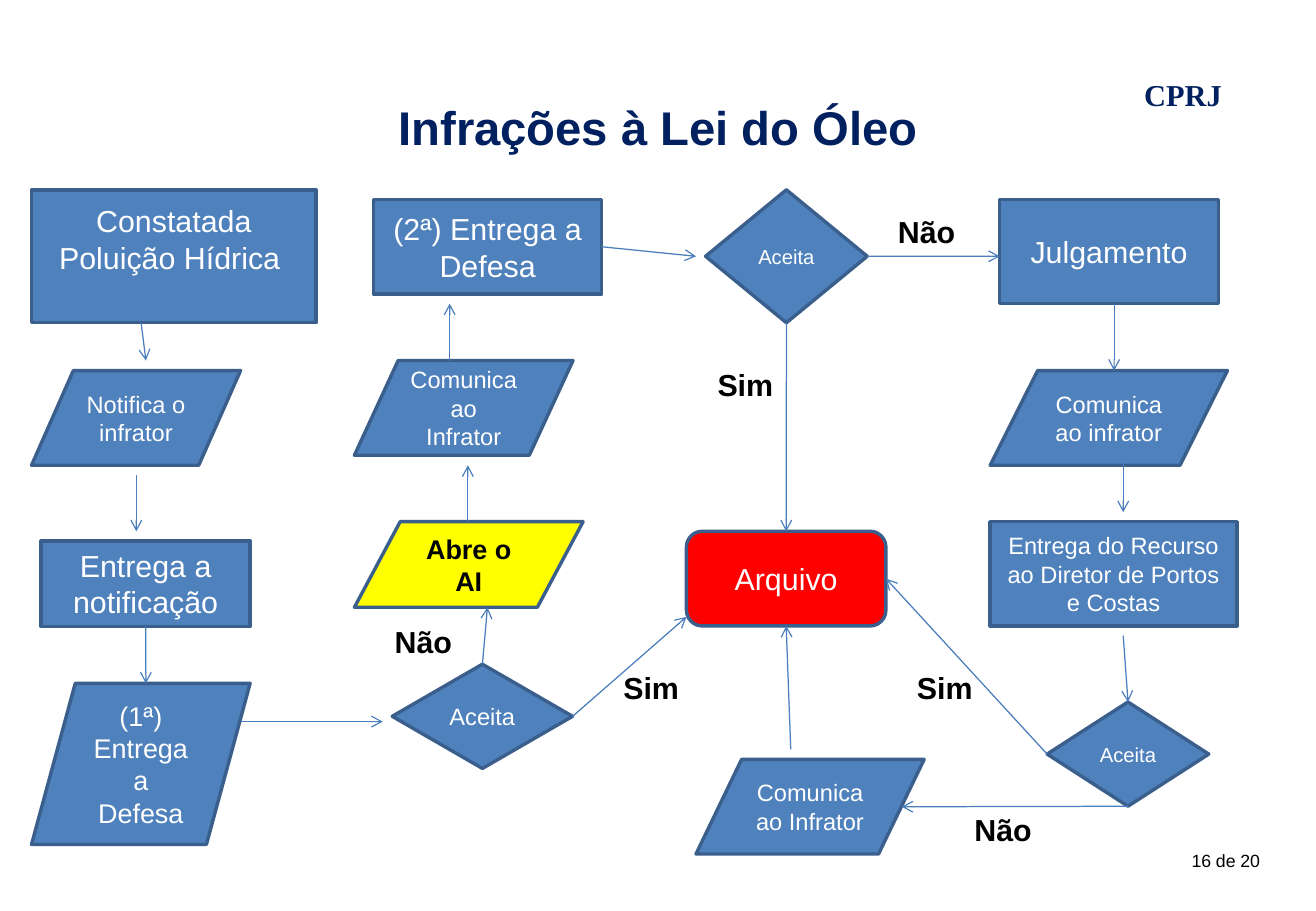
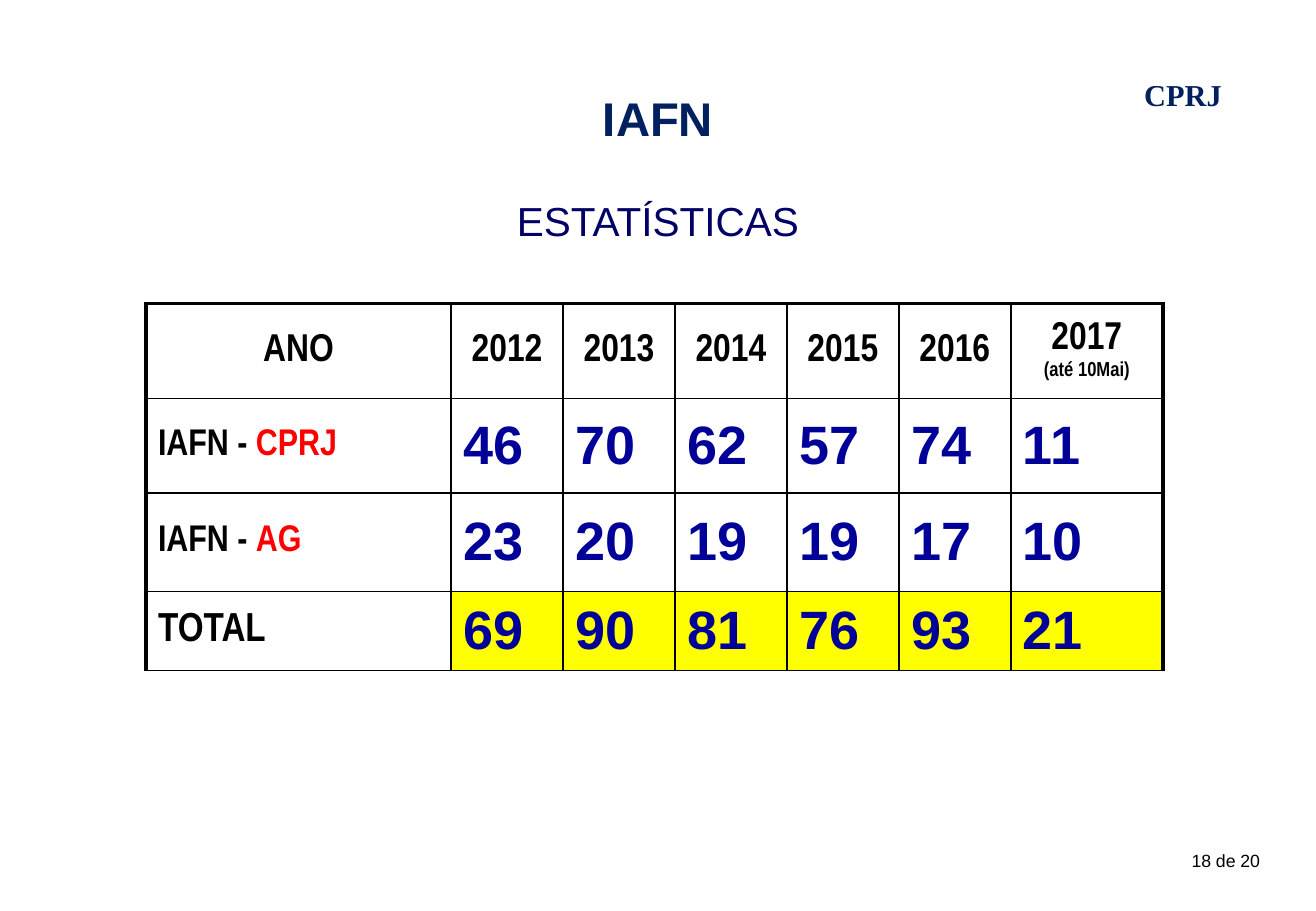
from lxml.etree import SubElement
from pptx import Presentation
from pptx.dml.color import RGBColor
from pptx.enum.shapes import MSO_CONNECTOR, MSO_SHAPE
from pptx.enum.text import MSO_ANCHOR, PP_ALIGN
from pptx.oxml.ns import qn
from pptx.util import Cm, Pt


class Theme:
    navy = "002060"
    subtitle = "000066"
    figure = "000099"
    blue = "4F81BD"
    outline = "3A5F8C"
    arrow = "4B7EBC"
    red = "FF0000"
    yellow = "FFFF00"
    black = "000000"
    white = "FFFFFF"
    sans = "Arial"
    narrow = "Arial Narrow"
    serif = "Times New Roman"
    title_size = 28
    subtitle_size = 24
    label_size = 18
    footer_size = 10.5
    header_size = 23
    figure_size = 32
    note_size = 12
    thick = 2.25
    thin = 1


PROCESS = MSO_SHAPE.FLOWCHART_PROCESS
DATA = MSO_SHAPE.FLOWCHART_DATA
DECISION = MSO_SHAPE.FLOWCHART_DECISION
ARCHIVE = MSO_SHAPE.FLOWCHART_ALTERNATE_PROCESS
TOP, LEFT, BOTTOM, RIGHT = range(4)

SLIDE_SIZE = (27.51, 19.05)
HEADER_MARK = "CPRJ"

FLOW_TITLE = "Infrações à Lei do Óleo"
FLOW_NODES = {
    "poluição": (PROCESS, "Constatada Poluição Hídrica ", 18, (0.66, 3.97, 5.95, 2.78)),
    "notifica": (DATA, "Notifica o infrator", 14, (0.66, 7.75, 4.37, 1.98)),
    "notificação": (PROCESS, "Entrega a notificação", 18, (0.86, 11.31, 4.37, 1.79)),
    "defesa 1": (DATA, "(1ª) Entrega a Defesa", 16, (0.66, 14.29, 4.57, 3.37)),
    "aceita 1": (DECISION, "Aceita", 14, (8.2, 13.89, 3.77, 2.18)),
    "abre": (DATA, "Abre o AI", 16, (7.41, 10.91, 4.78, 1.79)),
    "comunica 1": (DATA, "Comunica ao Infrator", 14, (7.41, 7.54, 4.57, 1.98)),
    "defesa 2": (PROCESS, "(2ª) Entrega a Defesa", 18, (7.81, 4.17, 4.77, 1.98)),
    "aceita 2": (DECISION, "Aceita", 12, (14.75, 3.97, 3.38, 2.78)),
    "arquivo": (ARCHIVE, "Arquivo", 18, (14.35, 11.11, 4.17, 1.98)),
    "julgamento": (PROCESS, "Julgamento", 18, (20.9, 4.17, 4.57, 2.18)),
    "comunica 2": (DATA, "Comunica ao infrator", 14, (20.7, 7.75, 4.96, 1.98)),
    "recurso": (PROCESS, "Entrega do Recurso ao Diretor de Portos e Costas", 14,
                (20.7, 10.91, 5.16, 2.18)),
    "aceita 3": (DECISION, "Aceita", 12, (21.89, 14.68, 3.38, 2.18)),
    "comunica 3": (DATA, "Comunica ao Infrator", 14, (14.55, 15.88, 4.77, 1.98)),
}
NODE_LOOKS = {
    "abre": {"fill": Theme.yellow, "color": Theme.black, "bold": True},
    "arquivo": {"fill": Theme.red},
}
NODE_BOTTOM_INSETS = {"poluição": 0.86}

FLOW_ARROWS = [
    ((2.95, 6.75), (3.05, 7.54)),
    ((2.85, 9.93), (2.85, 11.11)),
    (("notificação", BOTTOM), (3.05, 14.29)),
    ((5.03, 15.09), (8.0, 15.09)),
    (("aceita 1", TOP), (10.19, 12.7)),
    (("aceita 1", RIGHT), (14.35, 12.9)),
    ((9.78, 10.91), (9.78, 9.73)),
    ((9.4, 7.54), (9.4, 6.35)),
    (("defesa 2", RIGHT), (14.55, 5.36)),
    (("aceita 2", RIGHT), (20.9, 5.36)),
    (("aceita 2", BOTTOM), ("arquivo", TOP)),
    ((23.29, 6.35), (23.29, 7.75)),
    ((23.48, 9.53), (23.48, 10.71)),
    ((23.48, 13.29), ("aceita 3", TOP)),
    (("aceita 3", LEFT), ("arquivo", RIGHT)),
    (("aceita 3", BOTTOM), (18.85, 16.87)),
    ((16.53, 15.67), ("arquivo", BOTTOM)),
]

FLOW_LABELS = [
    ("Não", 8.0, 12.9),
    ("Sim", 12.78, 13.87),
    ("Sim", 14.75, 7.54),
    ("Não", 18.52, 4.34),
    ("Sim", 18.92, 13.87),
    ("Não", 20.12, 16.84),
]

STATS_TITLE = "IAFN"
STATS_SUBTITLE = "ESTATÍSTICAS"
YEARS = ["2012", "2013", "2014", "2015", "2016", "2017"]
LAST_YEAR_NOTE = "(até 10Mai)"
STATS_ROWS = [
    ("IAFN - ", "CPRJ", 22, [46, 70, 62, 57, 74, 11]),
    ("IAFN - ", "AG", 22, [23, 20, 19, 19, 17, 10]),
    ("TOTAL", "", 24, [69, 90, 81, 76, 93, 21]),
]
COLUMN_WIDTHS = [6.38] + [2.34] * 5 + [3.18]
ROW_HEIGHTS = [1.98, 1.98, 2.06, 1.65]


def rgb(value):
    return RGBColor.from_string(value)


def write(frame, *lines, size, color=Theme.black, font=Theme.sans, bold=False,
          align=PP_ALIGN.LEFT, spacing=None):
    for index, line in enumerate(lines):
        para = frame.paragraphs[0] if index == 0 else frame.add_paragraph()
        para.alignment = align
        if spacing:
            para.line_spacing = spacing
        for text, changes in [(line, {})] if isinstance(line, str) else line:
            span = para.add_run()
            span.text = text
            span.font.name = font
            span.font.bold = bold
            span.font.size = Pt(changes.get("size", size))
            span.font.color.rgb = rgb(changes.get("color", color))


def add_text(page, text, place, anchor=MSO_ANCHOR.TOP, inset=True, **look):
    box = page.shapes.add_textbox(*map(Cm, place))
    frame = box.text_frame
    frame.word_wrap = True
    frame.vertical_anchor = anchor
    if not inset:
        frame.margin_left = frame.margin_right = 0
        frame.margin_top = frame.margin_bottom = 0
    write(frame, text, **look)


def add_page(deck, title, title_height, number):
    page = deck.slides.add_slide(deck.slide_layouts[6])
    add_text(page, HEADER_MARK, (23.67, 1.47, 2.39, 1.02), size=Theme.label_size,
             font=Theme.serif, color=Theme.navy, bold=True)
    add_text(page, title, (1.37, 0.76, 24.77, title_height), anchor=MSO_ANCHOR.MIDDLE,
             inset=False, size=Theme.title_size, color=Theme.navy, bold=True,
             align=PP_ALIGN.CENTER, spacing=1.5)
    add_text(page, f"{number} de 20", (24.66, 17.65, 2.18, 0.71), size=Theme.footer_size)
    return page


def add_node(page, kind, text, size, place, fill=Theme.blue, color=Theme.white, bold=False):
    node = page.shapes.add_shape(kind, *map(Cm, place))
    node.shadow.inherit = False
    node.fill.solid()
    node.fill.fore_color.rgb = rgb(fill)
    node.line.color.rgb = rgb(Theme.outline)
    node.line.width = Pt(2)
    node.text_frame.vertical_anchor = MSO_ANCHOR.MIDDLE
    write(node.text_frame, text, size=size, color=color, bold=bold, align=PP_ALIGN.CENTER)
    return node


def add_arrow(page, nodes, start, end):
    points = [(0, 0) if point[0] in nodes else point for point in (start, end)]
    arrow = page.shapes.add_connector(
        MSO_CONNECTOR.STRAIGHT, *(Cm(value) for point in points for value in point))
    if start[0] in nodes:
        arrow.begin_connect(nodes[start[0]], start[1])
    if end[0] in nodes:
        arrow.end_connect(nodes[end[0]], end[1])
    arrow.line.color.rgb = rgb(Theme.arrow)
    arrow.line.width = Pt(0.75)
    SubElement(arrow.line._get_or_add_ln(), qn("a:tailEnd"), type="arrow")
    SubElement(arrow._element.spPr, qn("a:effectLst"))


def set_borders(cell, widths):
    properties = cell._tc.get_or_add_tcPr()
    for side, width in widths.items():
        line = SubElement(properties, qn(f"a:ln{side}"), w=str(Pt(width)))
        SubElement(SubElement(line, qn("a:solidFill")), qn("a:srgbClr"), val=Theme.black)


def build_flow(deck):
    page = add_page(deck, FLOW_TITLE, 3.18, 16)
    nodes = {name: add_node(page, *node, **NODE_LOOKS.get(name, {}))
             for name, node in FLOW_NODES.items()}
    for name, inset in NODE_BOTTOM_INSETS.items():
        nodes[name].text_frame.margin_bottom = Cm(inset)
    for start, end in FLOW_ARROWS:
        add_arrow(page, nodes, start, end)
    for text, left, top in FLOW_LABELS:
        add_text(page, text, (left, top, 2, 1.02), size=Theme.label_size, bold=True)


def build_stats(deck):
    page = add_page(deck, STATS_TITLE, 2.82, 18)
    add_text(page, STATS_SUBTITLE, (1.45, 3.97, 24.61, 1.27), size=Theme.subtitle_size,
             color=Theme.subtitle, align=PP_ALIGN.CENTER)
    table = page.shapes.add_table(
        len(ROW_HEIGHTS), len(COLUMN_WIDTHS), Cm(3.05), Cm(6.35),
        Cm(sum(COLUMN_WIDTHS)), Cm(sum(ROW_HEIGHTS))).table
    table.first_row = table.horz_banding = False
    for column, width in zip(table.columns, COLUMN_WIDTHS):
        column.width = Cm(width)
    for row, height in zip(table.rows, ROW_HEIGHTS):
        row.height = Cm(height)

    last_row, last_column = len(ROW_HEIGHTS) - 1, len(COLUMN_WIDTHS) - 1
    for y in range(last_row + 1):
        for x in range(last_column + 1):
            cell = table.cell(y, x)
            cell.vertical_anchor = MSO_ANCHOR.MIDDLE
            set_borders(cell, {
                "L": Theme.thin if x else Theme.thick,
                "R": Theme.thick if x == last_column else Theme.thin,
                "T": Theme.thin if y else Theme.thick,
                "B": Theme.thin,
            })
            if y == last_row and x:
                cell.fill.solid()
                cell.fill.fore_color.rgb = rgb(Theme.yellow)
            else:
                cell.fill.background()

    for x, heading in enumerate(["ANO"] + YEARS):
        note = [[(LAST_YEAR_NOTE, {"size": Theme.note_size})]] if x == last_column else []
        frame = table.cell(0, x).text_frame
        write(frame, heading, *note, size=Theme.header_size, font=Theme.narrow,
              bold=True, align=PP_ALIGN.CENTER)
        for para in frame.paragraphs[1:]:
            para.space_before = Pt(2.4)
    for y, (name, unit, size, values) in enumerate(STATS_ROWS, 1):
        spans = [(name, {})] + ([(unit, {"color": Theme.red})] if unit else [])
        write(table.cell(y, 0).text_frame, spans, size=size, font=Theme.narrow, bold=True)
        for x, value in enumerate(values, 1):
            write(table.cell(y, x).text_frame, str(value), size=Theme.figure_size,
                  color=Theme.figure, bold=True)


def main():
    deck = Presentation()
    deck.slide_width, deck.slide_height = map(Cm, SLIDE_SIZE)
    build_flow(deck)
    build_stats(deck)
    deck.save("out.pptx")


if __name__ == "__main__":
    main()
